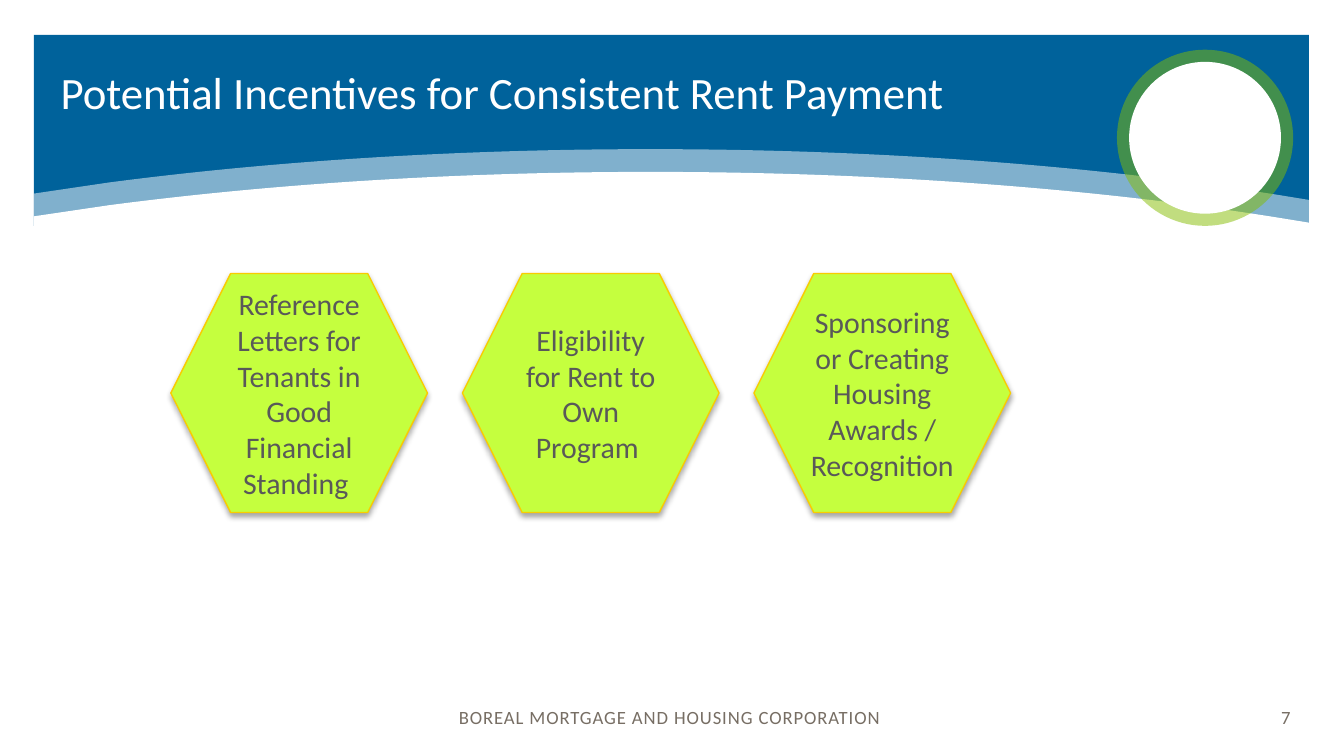
"""Build the slide on potential incentives for consistent rent payment."""
from lxml import etree
from pptx import Presentation
from pptx import util as u
from pptx.dml.color import RGBColor
from pptx.enum import shapes, text
from pptx.oxml import ns

THEME = {
    "font": "Calibri",
    "blue": "00629B", "white": "FFFFFF", "green": "84BD00", "lime": "C5FF3E",
    "gold": "F9CC00", "ink": "595959", "taupe": "776E64", "shadow": "000000",
    "title_size": 24, "item_size": 16, "footer_size": 10,
}


def paint(shape, color, alpha=None):
    shape.shadow.inherit = False
    shape.line.fill.background()
    shape.fill.solid()
    shape.fill.fore_color.rgb = RGBColor.from_string(THEME[color])
    if alpha:
        clr = shape.element.spPr.find(f"{ns.qn('a:solidFill')}/{ns.qn('a:srgbClr')}")
        etree.SubElement(clr, ns.qn("a:alpha"), val=str(alpha * 1000))


def write(shape, words, size, color, align, leading=None, tracking=None, inset=None):
    frame = shape.text_frame
    frame.word_wrap = True
    frame.auto_size = text.MSO_AUTO_SIZE.NONE
    frame.vertical_anchor = text.MSO_ANCHOR.MIDDLE
    if inset is not None:
        frame.margin_left = frame.margin_right = inset
        frame.margin_top = frame.margin_bottom = inset
    paragraph = frame.paragraphs[0]
    paragraph.alignment = align
    if leading:
        paragraph.line_spacing = u.Pt(leading)
    run = paragraph.add_run()
    run.text = words
    run.font.name = THEME["font"]
    run.font.size = u.Pt(THEME[size])
    run.font.color.rgb = RGBColor.from_string(THEME[color])
    if tracking:
        run.font._element.set("spc", str(tracking))


prs = Presentation()
prs.slide_width, prs.slide_height = u.Cm(25.4), u.Cm(14.29)
slide = prs.slides.add_slide(prs.slide_layouts[5])
preset, align = shapes.MSO_SHAPE, text.PP_ALIGN

banner = slide.shapes.add_shape(
    preset.RECTANGLE, u.Cm(0.64), u.Cm(0.66), u.Cm(24.1), u.Cm(3.61))
paint(banner, "blue")

crest = (12.29, 2.82)
right_arc = [(16.74, 2.82), (20.88, 3.15), (24.31, 3.71)]
right_edge, left_edge = (24.74, 3.78), (0.64, 3.66)
left_arc = [(5.11, 3.05), (8.59, 2.82), crest]
floor = 4.55
for drop, alpha in [(0, 50), (0.43, None)]:
    upper = [(x, y + drop) for x, y in
             [crest, *right_arc, right_edge, left_edge, (2.06, 3.45), *left_arc]]
    outline = upper[:5] + [(24.74, floor), (0.64, floor)] + upper[5:]
    points = [(u.Cm(x), u.Cm(y)) for x, y in outline]
    builder = slide.shapes.build_freeform(*points[0])
    builder.add_line_segments(points[1:], close=True)
    wave = builder.convert_to_shape()
    segments = list(wave.element.iter(ns.qn("a:lnTo")))
    for arc in (segments[:3], segments[-3:]):
        curve = etree.Element(ns.qn("a:cubicBezTo"))
        arc[0].addprevious(curve)
        for segment in arc:
            curve.append(segment[0])
            segment.getparent().remove(segment)
    paint(wave, "white", alpha)

footer = slide.shapes.add_shape(
    preset.RECTANGLE, 0, u.Cm(12.82), prs.slide_width, u.Cm(1.47))
paint(footer, "white")
write(footer, "BOREAL MORTGAGE AND HOUSING CORPORATION ", "footer_size", "taupe",
      align.CENTER, tracking=50, inset=0)

for left, top, diameter, color, alpha in [
    (21.11, 0.94, 3.33, "green", 50),
    (21.34, 1.17, 2.87, "white", None),
]:
    badge = slide.shapes.add_shape(
        preset.OVAL, u.Cm(left), u.Cm(top), u.Cm(diameter), u.Cm(diameter))
    paint(badge, color, alpha)

title = slide.shapes.title
title.left, title.top = u.Cm(0.89), u.Cm(0.66)
title.width, title.height = u.Cm(19.96), u.Cm(2.26)
write(title, "Potential Incentives for Consistent Rent Payment", "title_size", "white",
      align.LEFT, leading=26)
badge.element.addnext(title.element)

page_number = slide.shapes.add_textbox(u.Cm(23.22), u.Cm(12.82), u.Cm(1.42), u.Cm(1.47))
write(page_number, "7", "footer_size", "taupe", align.RIGHT, tracking=50)

incentives = [
    "Reference Letters for Tenants in Good Financial Standing ",
    "Eligibility for Rent to Own Program ",
    "Sponsoring or Creating Housing Awards / Recognition ",
]
for column, words in enumerate(incentives):
    incentive = slide.shapes.add_shape(
        preset.HEXAGON, u.Cm(3.23 + column * 5.51), u.Cm(5.17), u.Cm(4.85), u.Cm(4.52))
    paint(incentive, "lime")
    incentive.line.color.rgb = RGBColor.from_string(THEME["gold"])
    incentive.line.width = u.Pt(0.75)
    effects = incentive.element.spPr.find(ns.qn("a:effectLst"))
    shadow = etree.SubElement(effects, ns.qn("a:outerShdw"), blurRad=str(u.Pt(3.1)),
                              dist=str(u.Pt(1.8)), dir="5400000", rotWithShape="0")
    shade = etree.SubElement(shadow, ns.qn("a:srgbClr"), val=THEME["shadow"])
    etree.SubElement(shade, ns.qn("a:alpha"), val="35000")
    write(incentive, words, "item_size", "ink", align.CENTER)

prs.save("out.pptx")
